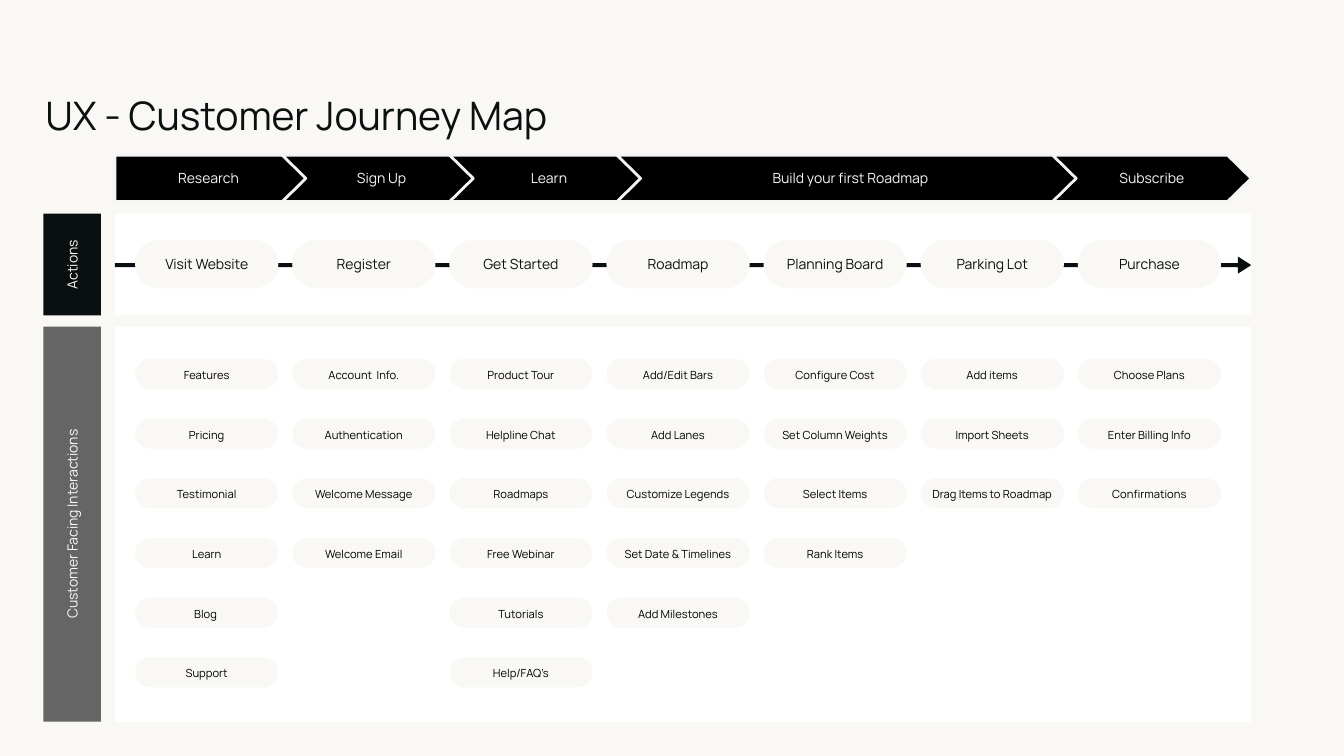
"""Build a one-page customer journey map slide."""
from dataclasses import dataclass

from pptx import Presentation
from pptx.dml.color import RGBColor
from pptx.enum.shapes import MSO_SHAPE
from pptx.enum.text import MSO_ANCHOR, PP_ALIGN
from pptx.util import Inches, Pt

ROUNDED, RECTANGLE = MSO_SHAPE.ROUNDED_RECTANGLE, MSO_SHAPE.RECTANGLE
PENTAGON, CHEVRON, ARROW = MSO_SHAPE.PENTAGON, MSO_SHAPE.CHEVRON, MSO_SHAPE.DOWN_ARROW
CENTER, LEFT = PP_ALIGN.CENTER, PP_ALIGN.LEFT
TOP, MIDDLE = MSO_ANCHOR.TOP, MSO_ANCHOR.MIDDLE


@dataclass(frozen=True)
class Theme:
    font: str = "Manrope"
    paper: str = "F9F8F5"
    ink: str = "09100F"
    black: str = "000000"
    white: str = "FFFFFF"
    gray: str = "656565"
    outline: str = "F4F4F4"
    title_size: int = 28
    label_size: int = 10
    detail_size: int = 8


THEME = Theme()
TITLE = "UX - Customer Journey Map"
PHASES = [("Research", 1.97), ("Sign Up", 1.97), ("Learn", 1.97),
          ("Build your first Roadmap", 4.63), ("Subscribe", 1.97)]
LANES = [("Actions", 2.12, 1.01, THEME.ink),
         ("Customer Facing Interactions", 3.24, 3.92, THEME.gray)]
JOURNEY = [
    ("Visit Website", ["Features", "Pricing", "Testimonial", "Learn", "Blog ", "Support"]),
    ("Register", ["Account  Info.", "Authentication", "Welcome Message", "Welcome Email"]),
    ("Get Started", ["Product Tour", "Helpline Chat", "Roadmaps", "Free Webinar",
                     "Tutorials", "Help/FAQ’s"]),
    ("Roadmap", ["Add/Edit Bars", "Add Lanes", "Customize Legends",
                 "Set Date & Timelines", "Add Milestones"]),
    ("Planning Board", ["Configure Cost", "Set Column Weights", "Select Items", "Rank Items"]),
    ("Parking Lot", ["Add items", "Import Sheets", "Drag Items to Roadmap"]),
    ("Purchase", ["Choose Plans", "Enter Billing Info", "Confirmations"]),
]

LANE_LEFT, LANE_WIDTH = 1.14, 11.27
LABEL_CENTER, LABEL_WIDTH = 0.715, 0.57
PHASE_TOP, PHASE_HEIGHT, PHASE_OVERLAP = 1.54, 0.46, 0.31
FIRST_COLUMN, LAST_COLUMN, PILL_WIDTH = 1.34, 10.69, 1.42
ACTION_TOP, ACTION_HEIGHT = 2.38, 0.48
DETAIL_TOP, DETAIL_STEP, DETAIL_HEIGHT = 3.56, 0.592, 0.3
ARROW_MIDDLE, ARROW_THICKNESS = 2.63, 0.17


def add_block(page, kind, frame, fill, adjustments=(), outline=None):
    """Add a flat filled shape."""
    box = page.shapes.add_shape(kind, *map(Inches, frame))
    box.shadow.inherit = False
    box.fill.solid()
    box.fill.fore_color.rgb = RGBColor.from_string(fill)
    for index, value in enumerate(adjustments):
        box.adjustments[index] = value
    if outline:
        box.line.color.rgb = RGBColor.from_string(outline)
        box.line.width = Pt(2)
    else:
        box.line.fill.background()
    return box


def add_upright(page, kind, center, size, fill, adjustments):
    """Add a shape turned a quarter counterclockwise around its center."""
    width, height = size
    frame = (center[0] - width / 2, center[1] - height / 2, width, height)
    box = add_block(page, kind, frame, fill, adjustments)
    box.rotation = 270
    return box


def write(box, text, size, color, align=CENTER, anchor=MIDDLE, margins=(0, 0)):
    """Put one styled paragraph in a shape and return it."""
    frame = box.text_frame
    frame.word_wrap = True
    frame.vertical_anchor = anchor
    frame.margin_left = frame.margin_right = Inches(margins[0])
    frame.margin_top = frame.margin_bottom = Inches(margins[1])
    para = frame.paragraphs[0]
    para.text = text
    para.alignment = align
    para.font.name = THEME.font
    para.font.size = Pt(size)
    para.font.color.rgb = RGBColor.from_string(color)
    return para


def add_lanes(page):
    """Add the white lanes with their upright labels."""
    for label, top, height, fill in LANES:
        add_block(page, ROUNDED, (LANE_LEFT, top, LANE_WIDTH, height), THEME.white, [0])
        box = add_upright(page, ROUNDED, (LABEL_CENTER, top + height / 2),
                          (height, LABEL_WIDTH), fill, [0])
        write(box, label, THEME.label_size, THEME.paper)


def add_phases(page):
    """Add the row of overlapping phase chevrons."""
    left = LANE_LEFT
    for index, (phase, width) in enumerate(PHASES):
        kind, point = (CHEVRON, 0.509) if index else (PENTAGON, 0.496)
        box = add_block(page, kind, (left, PHASE_TOP, width, PHASE_HEIGHT),
                        THEME.black, [point], THEME.outline)
        write(box, phase, THEME.label_size, THEME.paper, margins=(0.1, 0.05))
        left += width - PHASE_OVERLAP


def add_journey(page):
    """Add the arrow, the actions on it and the interactions below."""
    add_upright(page, ARROW, (LANE_LEFT + LANE_WIDTH / 2, ARROW_MIDDLE),
                (ARROW_THICKNESS, LANE_WIDTH), THEME.ink, [0.243, 0.776])
    column_step = (LAST_COLUMN - FIRST_COLUMN) / (len(JOURNEY) - 1)
    for column, (action, details) in enumerate(JOURNEY):
        left = FIRST_COLUMN + column * column_step
        box = add_block(page, ROUNDED, (left, ACTION_TOP, PILL_WIDTH, ACTION_HEIGHT),
                        THEME.paper, [0.5])
        write(box, action, THEME.label_size, THEME.ink)
        for row, detail in enumerate(details):
            top = DETAIL_TOP + row * DETAIL_STEP
            box = add_block(page, ROUNDED, (left, top, PILL_WIDTH, DETAIL_HEIGHT),
                            THEME.paper, [0.5])
            write(box, detail, THEME.detail_size, THEME.black).line_spacing = 1.15


def main():
    deck = Presentation()
    deck.slide_width, deck.slide_height = Inches(13.33), Inches(7.5)
    page = deck.slides.add_slide(deck.slide_layouts[6])
    page.background.fill.solid()
    page.background.fill.fore_color.rgb = RGBColor.from_string(THEME.paper)
    add_lanes(page)
    add_phases(page)
    add_journey(page)
    title = add_block(page, RECTANGLE, (0.45, 0.91, 9.23, 0.51), THEME.paper)
    write(title, TITLE, THEME.title_size, THEME.ink, LEFT, TOP).space_after = Pt(10)
    deck.save("out.pptx")


if __name__ == "__main__":
    main()
